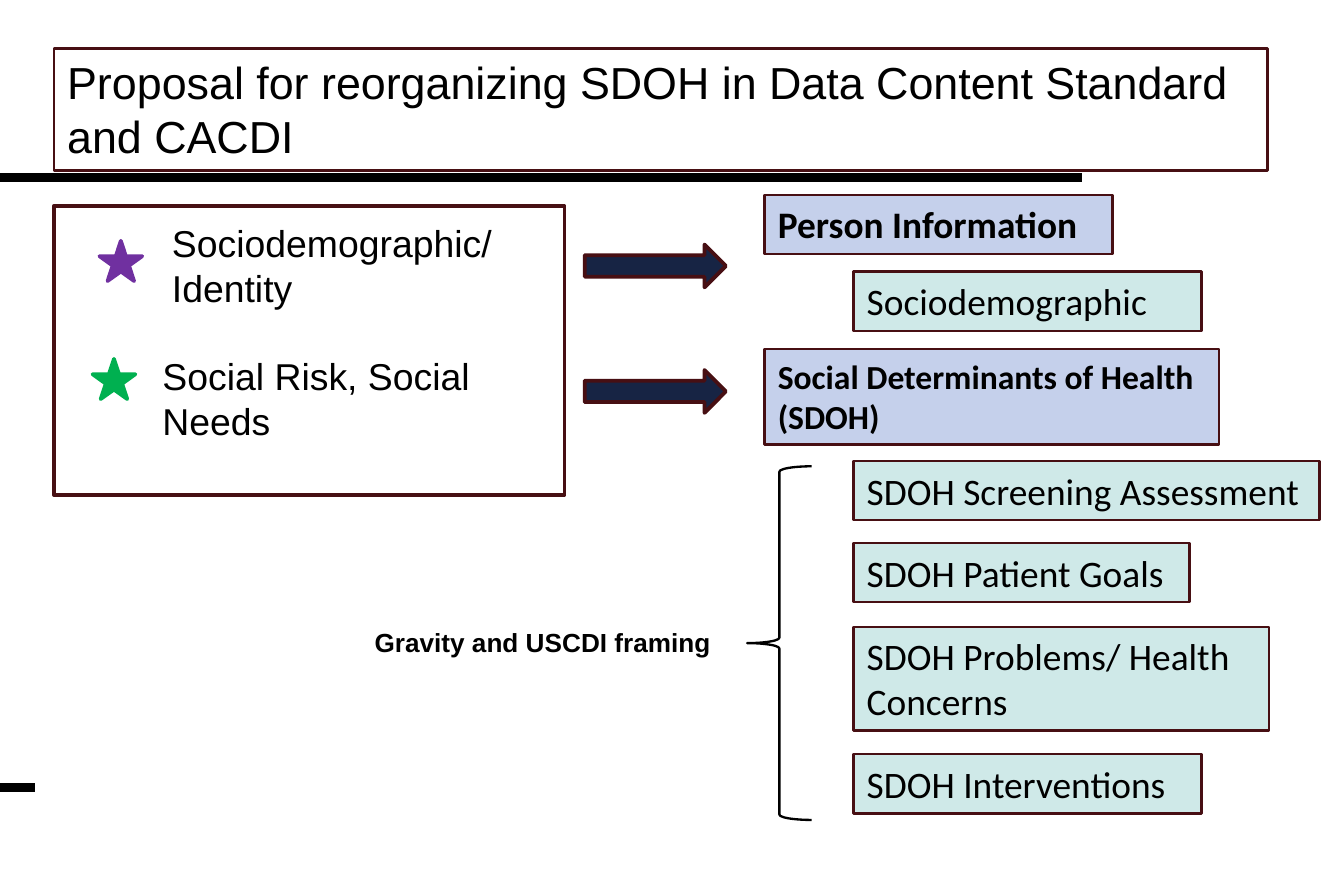
import pptx
import pptx.dml.color
import pptx.enum.shapes
import pptx.enum.text
import pptx.oxml.ns
import pptx.util
from pptx.util import Cm

RGBColor = pptx.dml.color.RGBColor
SHAPES = pptx.enum.shapes.MSO_SHAPE
BLACK = RGBColor(0x00, 0x00, 0x00)
MAROON = RGBColor(0x47, 0x0F, 0x13)
NAVY = RGBColor(0x17, 0x24, 0x44)
PURPLE = RGBColor(0x70, 0x30, 0xA0)
GREEN = RGBColor(0x00, 0xB0, 0x50)
HEADING_BLUE = RGBColor(0xC5, 0xD0, 0xEB)
ITEM_TEAL = RGBColor(0xCF, 0xE9, 0xE8)

HEADING_LEFT, ITEM_LEFT = 14.45, 16.13
BOX_HEIGHT = 1.12
HEADINGS = [
    ("Person Information", 3.68, 6.58, BOX_HEIGHT, 20),
    ("Social Determinants of Health (SDOH)", 6.6, 8.59, 1.8, 18),
]
ITEMS = [
    ("Sociodemographic", 5.13, 6.58, BOX_HEIGHT),
    ("SDOH Screening Assessment", 8.71, 8.81, BOX_HEIGHT),
    ("SDOH Patient Goals", 10.26, 6.35, BOX_HEIGHT),
    ("SDOH Problems/ Health Concerns", 11.84, 7.85, 1.96),
    ("SDOH Interventions", 14.25, 6.58, BOX_HEIGHT),
]
CATEGORIES = [
    ("Sociodemographic/ Identity", 3.0, 4.04, 1.88, 4.55, PURPLE),
    ("Social Risk, Social Needs", 2.82, 6.55, 1.75, 6.78, GREEN),
]
ARROW_TOPS = [4.62, 6.99]
RULES = [(3.35, 20.45), (14.88, 0.66)]


def write_text(shape, text, size, name="Arial", bold=False, space_after=0):
    """Fill a shape with one left-aligned paragraph."""
    frame = shape.text_frame
    frame.word_wrap = True
    frame.vertical_anchor = pptx.enum.text.MSO_ANCHOR.TOP
    paragraph = frame.paragraphs[0]
    paragraph.alignment = pptx.enum.text.PP_ALIGN.LEFT
    paragraph.space_after = pptx.util.Pt(space_after)
    run = paragraph.add_run()
    run.text = text
    font_format = {"name": name, "size": pptx.util.Pt(size), "bold": bold}
    for attribute, value in font_format.items():
        setattr(run.font, attribute, value)
    run.font.color.rgb = BLACK


def add_figure(slide, kind, box, fill, line, width):
    """Add a preset shape with a flat fill, or none, and an outline."""
    shape = slide.shapes.add_shape(kind, *map(Cm, box))
    shape.shadow.inherit = False
    if fill is None:
        shape.fill.background()
    else:
        shape.fill.solid()
        shape.fill.fore_color.rgb = fill
    shape.line.color.rgb = line
    shape.line.width = pptx.util.Pt(width)
    return shape


def add_label(slide, box, text, size, **text_format):
    """Add a plain text box."""
    label = slide.shapes.add_textbox(*map(Cm, box))
    write_text(label, text, size, **text_format)


def add_rule(slide, top, length):
    """Add a thick horizontal line from the left edge of the slide."""
    rule = slide.shapes.add_connector(
        pptx.enum.shapes.MSO_CONNECTOR.STRAIGHT, 0, Cm(top), Cm(length), Cm(top))
    rule.line.color.rgb = BLACK
    rule.line.width = pptx.util.Pt(5)
    properties = rule._element.spPr
    properties.append(pptx.oxml.xmlchemy.OxmlElement("a:effectLst"))


def add_text_box(slide, box, fill, text, size, bold=False):
    """Add an outlined category box with Calibri text."""
    shape = add_figure(slide, SHAPES.RECTANGLE, box, fill, MAROON, 1.25)
    write_text(shape, text, size, "Calibri", bold)


def main():
    """Build the slide and save it."""
    presentation = pptx.Presentation()
    presentation.slide_width = Cm(25.4)
    presentation.slide_height = Cm(16.51)
    slide = presentation.slides.add_slide(presentation.slide_layouts[6])

    for top, length in RULES:
        add_rule(slide, top, length)

    for text, left, top, star_left, star_top, color in CATEGORIES:
        add_figure(slide, SHAPES.STAR_5_POINT, (star_left, star_top, 0.81, 0.76),
                   color, color, 2)
        add_label(slide, (left, top, 7.7, 0.76), text, 20, space_after=6)
    add_figure(slide, SHAPES.RECTANGLE, (1.02, 3.89, 9.65, 5.46), None, MAROON, 2)

    title = add_figure(slide, SHAPES.RECTANGLE, (1.02, 0.91, 22.94, 2.31),
                       None, MAROON, 1.5)
    write_text(title, "Proposal for reorganizing SDOH in Data Content Standard and CACDI", 24)

    for top in ARROW_TOPS:
        add_figure(slide, SHAPES.RIGHT_ARROW, (11.05, top, 2.67, 0.81), NAVY, MAROON, 2)

    for text, top, width, height, size in HEADINGS:
        add_text_box(slide, (HEADING_LEFT, top, width, height), HEADING_BLUE,
                     text, size, bold=True)
    for text, top, width, height in ITEMS:
        add_text_box(slide, (ITEM_LEFT, top, width, height), ITEM_TEAL, text, 20)

    add_figure(slide, SHAPES.LEFT_BRACE, (14.12, 8.81, 1.22, 6.68), None, BLACK, 1.25)
    add_label(slide, (6.83, 11.71, 12.7, 0.86), "Gravity and USCDI framing", 14, bold=True)

    presentation.save("out.pptx")


if __name__ == "__main__":
    main()
